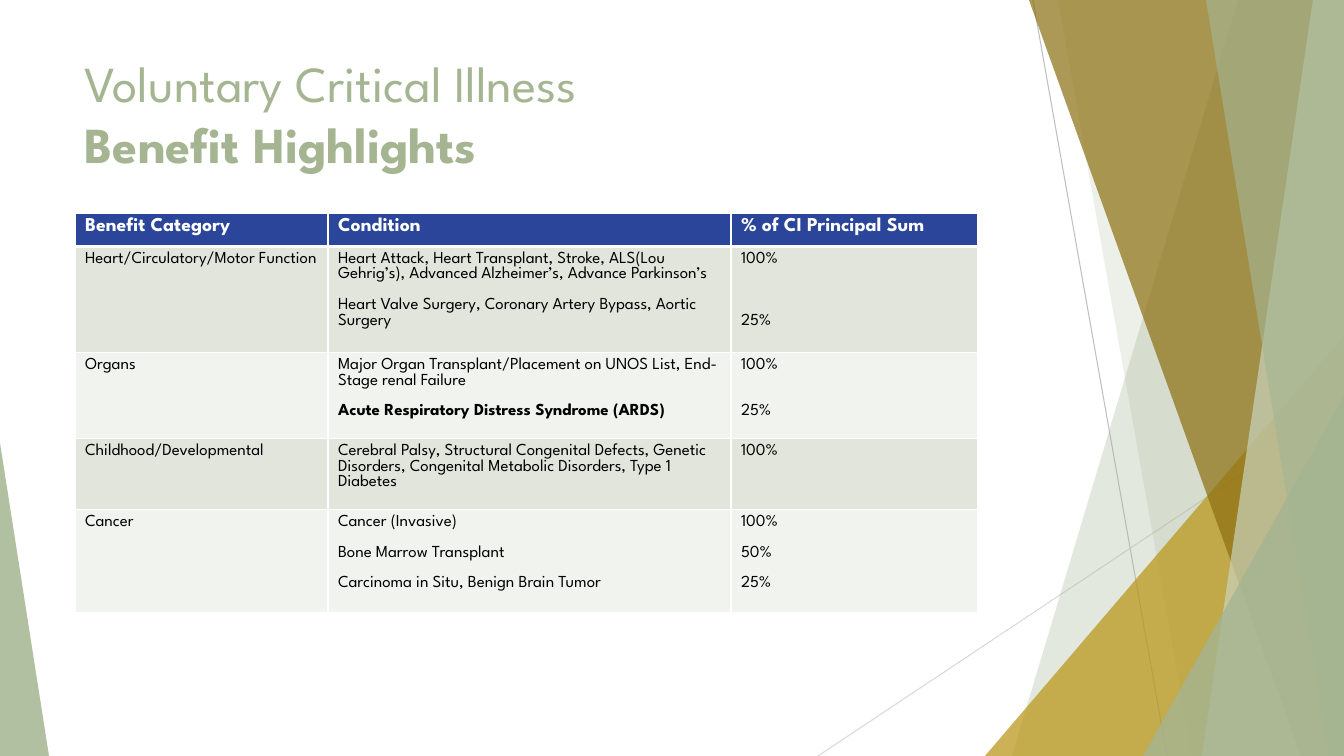
from dataclasses import dataclass

from lxml.etree import SubElement
from pptx import Presentation
from pptx.dml.color import RGBColor
from pptx.enum.shapes import MSO_CONNECTOR, MSO_SHAPE
from pptx.enum.text import MSO_ANCHOR
from pptx.oxml.ns import qn
from pptx.util import Pt

PX = 914400 / 100.8
WIDTH, HEIGHT = 1344, 756


@dataclass(frozen=True)
class Theme:
    font: str = "League Spartan"
    sage: str = "A5B592"
    pale_sage: str = "C9D3BE"
    gold: str = "B99415"
    bronze: str = "8B6F10"
    line: str = "BFBFBF"
    pale_line: str = "D9D9D9"
    header: str = "2A459A"
    bands: tuple = ("E1E5DC", "F0F3EE")
    white: str = "FFFFFF"
    black: str = "000000"
    title_size: float = 36
    title_leading: float = 43.5
    header_size: float = 14
    body_size: float = 12
    blank_line: float = 11


THEME = Theme()

COLUMNS = (253, 403, 247)
ROW_HEIGHTS = (31, 103, 85, 66, 103)
HEADERS = ("Benefit Category", "Condition", "% of CI Principal Sum")

# Each entry: text, blank lines above, bold
BENEFITS = (
    (
        [("Heart/Circulatory/Motor Function", 0, False)],
        [("Heart Attack, Heart Transplant, Stroke, ALS(Lou Gehrig’s), "
          "Advanced Alzheimer’s, Advance Parkinson’s", 0, False),
         ("Heart Valve Surgery, Coronary Artery Bypass, Aortic Surgery", 1, False)],
        [("100%", 0, False), ("25%", 3, False)],
    ),
    (
        [("Organs", 0, False)],
        [("Major Organ Transplant/Placement on UNOS List, End-Stage renal Failure", 0, False),
         ("Acute Respiratory Distress Syndrome (ARDS)", 1, True)],
        [("100%", 0, False), ("25%", 2, False)],
    ),
    (
        [("Childhood/Developmental", 0, False)],
        [("Cerebral Palsy, Structural Congenital Defects, Genetic Disorders, "
          "Congenital Metabolic Disorders, Type 1 Diabetes", 0, False)],
        [("100%", 0, False)],
    ),
    (
        [("Cancer", 0, False)],
        [("Cancer (Invasive)", 0, False),
         ("Bone Marrow Transplant", 1, False),
         ("Carcinoma in Situ, Benign Brain Tumor", 1, False)],
        [("100%", 0, False), ("50%", 1, False), ("25%", 1, False)],
    ),
)


def px(n):
    return round(n * PX)


def rgb(color):
    return RGBColor.from_string(color)


def style_run(r, size, color, bold):
    r.font.name = THEME.font
    r.font.size = Pt(size)
    r.font.color.rgb = rgb(color)
    r.font.bold = bold


def paint(sp, color, opacity):
    sp.shadow.inherit = False
    sp.fill.solid()
    sp.fill.fore_color.rgb = rgb(color)
    clr = sp.fill._xPr.find(qn("a:solidFill"))[0]
    SubElement(clr, qn("a:alpha"), val=str(opacity * 1000))
    sp.line.fill.background()


def add_thin_line(s, x1, y1, x2, y2, color):
    line = s.shapes.add_connector(MSO_CONNECTOR.STRAIGHT, px(x1), px(y1), px(x2), px(y2))
    line.line.color.rgb = rgb(color)
    line.line.width = Pt(0.75)
    SubElement(line._element.spPr, qn("a:effectLst"))


def add_facet(s, top_x, bottom_x, color, opacity):
    outline = s.shapes.build_freeform(top_x, 0, scale=PX)
    outline.add_line_segments([(WIDTH, 0), (WIDTH, HEIGHT), (bottom_x, HEIGHT)], close=True)
    paint(outline.convert_to_shape(), color, opacity)


def add_corner(s, x, y, w, apex, color, opacity):
    sp = s.shapes.add_shape(MSO_SHAPE.ISOSCELES_TRIANGLE, px(x), px(y), px(w), px(HEIGHT - y))
    sp.adjustments[0] = apex
    paint(sp, color, opacity)


def add_title(s, first, second):
    tf = s.shapes.add_textbox(px(75), px(44), px(948), px(145)).text_frame
    tf.word_wrap = True
    tf.vertical_anchor = MSO_ANCHOR.TOP
    tf.margin_top = px(8)
    p = tf.paragraphs[0]
    p.text = f"{first}\v{second}"
    p.line_spacing = Pt(THEME.title_leading)
    for r, bold in zip(p.runs, (False, True)):
        style_run(r, THEME.title_size, THEME.sage, bold)


def set_borders(cell, top, bottom):
    tcPr = cell._tc.get_or_add_tcPr()
    for side, width in (("L", 1), ("R", 1), ("T", top), ("B", bottom)):
        ln = SubElement(tcPr, qn(f"a:ln{side}"), w=str(Pt(width)))
        fill = SubElement(ln, qn("a:solidFill"))
        SubElement(fill, qn("a:srgbClr"), val=THEME.white)


def fill_cell(cell, entries, size, color, background):
    cell.fill.solid()
    cell.fill.fore_color.rgb = rgb(background)
    tf = cell.text_frame
    tf.text = "\n".join(text for text, _, _ in entries)
    for p, (_, blanks, bold) in zip(tf.paragraphs, entries):
        if blanks:
            p.space_before = Pt(blanks * THEME.blank_line)
        style_run(p.runs[0], size, color, bold)


def add_benefit_table(s):
    rows = [[[(text, 0, True)] for text in HEADERS], *BENEFITS]
    table = s.shapes.add_table(len(rows), len(COLUMNS), px(75), px(213),
                               px(sum(COLUMNS)), px(sum(ROW_HEIGHTS))).table
    table.horz_banding = False
    for column, width in zip(table.columns, COLUMNS):
        column.width = px(width)
    for i, (row, height, contents) in enumerate(zip(table.rows, ROW_HEIGHTS, rows)):
        row.height = px(height)
        if i == 0:
            look = (THEME.header_size, THEME.white, THEME.header)
        else:
            look = (THEME.body_size, THEME.black, THEME.bands[(i - 1) % 2])
        for cell, entries in zip(row.cells, contents):
            set_borders(cell, 3 if i == 1 else 1, 3 if i == 0 else 1)
            fill_cell(cell, entries, *look)


def add_backdrop(s):
    add_thin_line(s, 1033, 0, 1167, HEIGHT, THEME.line)
    add_thin_line(s, WIDTH, 406, 818, HEIGHT, THEME.pale_line)
    add_facet(s, 1238, 1012, THEME.sage, 30)
    add_facet(s, 1058, 1192, THEME.sage, 20)
    add_corner(s, 985, 336, 359, 1, THEME.gold, 72)
    add_facet(s, 1029, 1301, THEME.bronze, 70)
    add_facet(s, 1313, 1202, THEME.pale_sage, 70)
    add_facet(s, 1206, 1329, THEME.sage, 65)
    add_corner(s, 1143, 396, 201, 1, THEME.sage, 80)
    add_corner(s, 0, 443, 49, 0, THEME.sage, 85)


def main():
    prs = Presentation()
    prs.slide_width, prs.slide_height = px(WIDTH), px(HEIGHT)
    s = prs.slides.add_slide(prs.slide_layouts[6])
    add_backdrop(s)
    add_title(s, "Voluntary Critical Illness", "Benefit Highlights")
    add_benefit_table(s)
    prs.save("out.pptx")


if __name__ == "__main__":
    main()
